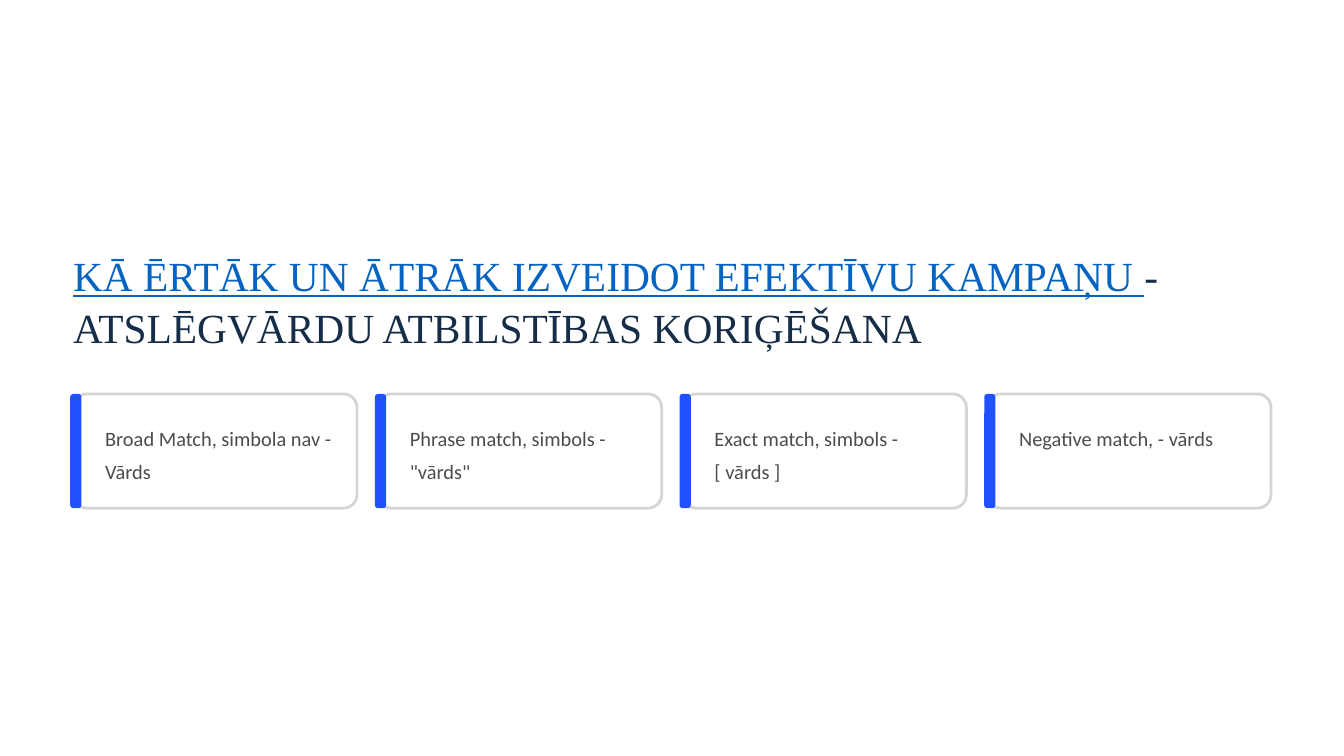
from pptx import Presentation
from pptx.dml.color import RGBColor
from pptx.enum.shapes import MSO_SHAPE as Shape
from pptx.enum.text import MSO_ANCHOR as Anchor, PP_ALIGN as Align
from pptx.util import Pt

WHITE = RGBColor(0xFF, 0xFF, 0xFF)
BLUE = RGBColor(0x21, 0x50, 0xFE)
LINK_BLUE = RGBColor(0x05, 0x63, 0xC1)
NAVY = RGBColor(0x15, 0x2D, 0x47)
GREY = RGBColor(0x4C, 0x4C, 0x4D)
BORDER = RGBColor(0xD8, 0xD4, 0xD4)

LEFT = 62.6
CARD_TOP = 337.7
CARD_WIDTH = 243.4
CARD_HEIGHT = 97.9
CARD_STEP = 261.15

MATCH_TYPES = [
    "Broad Match, simbola nav - Vārds",
    'Phrase match, simbols - "vārds"',
    "Exact match, simbols - [ vārds ]",
    "Negative match, - vārds",
]


def add_rounded(page, left, width, radius, fill, border=None):
    box = page.shapes.add_shape(
        Shape.ROUNDED_RECTANGLE, Pt(left), Pt(CARD_TOP), Pt(width), Pt(CARD_HEIGHT)
    )
    box.adjustments[0] = radius
    box.shadow.inherit = False
    box.fill.solid()
    box.fill.fore_color.rgb = fill
    if border is None:
        box.line.fill.background()
    else:
        box.line.color.rgb = border
        box.line.width = Pt(2.4)


def add_text(page, left, top, width, height, spans, font, size, spacing):
    box = page.shapes.add_textbox(Pt(left), Pt(top), Pt(width), Pt(height))
    frame = box.text_frame
    frame.word_wrap = True
    frame.vertical_anchor = Anchor.TOP
    frame.margin_left = frame.margin_right = 0
    frame.margin_top = frame.margin_bottom = 0
    para = frame.paragraphs[0]
    para.alignment = Align.LEFT
    para.line_spacing = Pt(spacing)
    for text, color, underline in spans:
        span = para.add_run()
        span.text = text
        span.font.name = font
        span.font.size = Pt(size)
        span.font.color.rgb = color
        span.font.underline = underline


def add_card(page, left, text):
    add_rounded(page, left, CARD_WIDTH, 0.118, WHITE, BORDER)
    add_rounded(page, left - 2.4, 9.6, 0.279, BLUE)
    add_text(page, left + 27.5, 357.8, 195.8, 57, [(text, GREY, False)],
             "Calibri", 17.5, 28.5)


def main():
    deck = Presentation()
    deck.slide_width = Pt(1152)
    deck.slide_height = Pt(648)
    page = deck.slides.add_slide(deck.slide_layouts[6])
    page.background.fill.solid()
    page.background.fill.fore_color.rgb = WHITE

    title = [
        ("KĀ ĒRTĀK UN ĀTRĀK IZVEIDOT EFEKTĪVU KAMPAŅU ", LINK_BLUE, True),
        ("- ATSLĒGVĀRDU ATBILSTĪBAS KORIĢĒŠANA", NAVY, False),
    ]
    add_text(page, LEFT, 212.4, 1026.8, 89.3, title, "Times New Roman", 35.5, 44.5)
    for index, text in enumerate(MATCH_TYPES):
        add_card(page, LEFT + index * CARD_STEP, text)

    deck.save("out.pptx")


if __name__ == "__main__":
    main()
